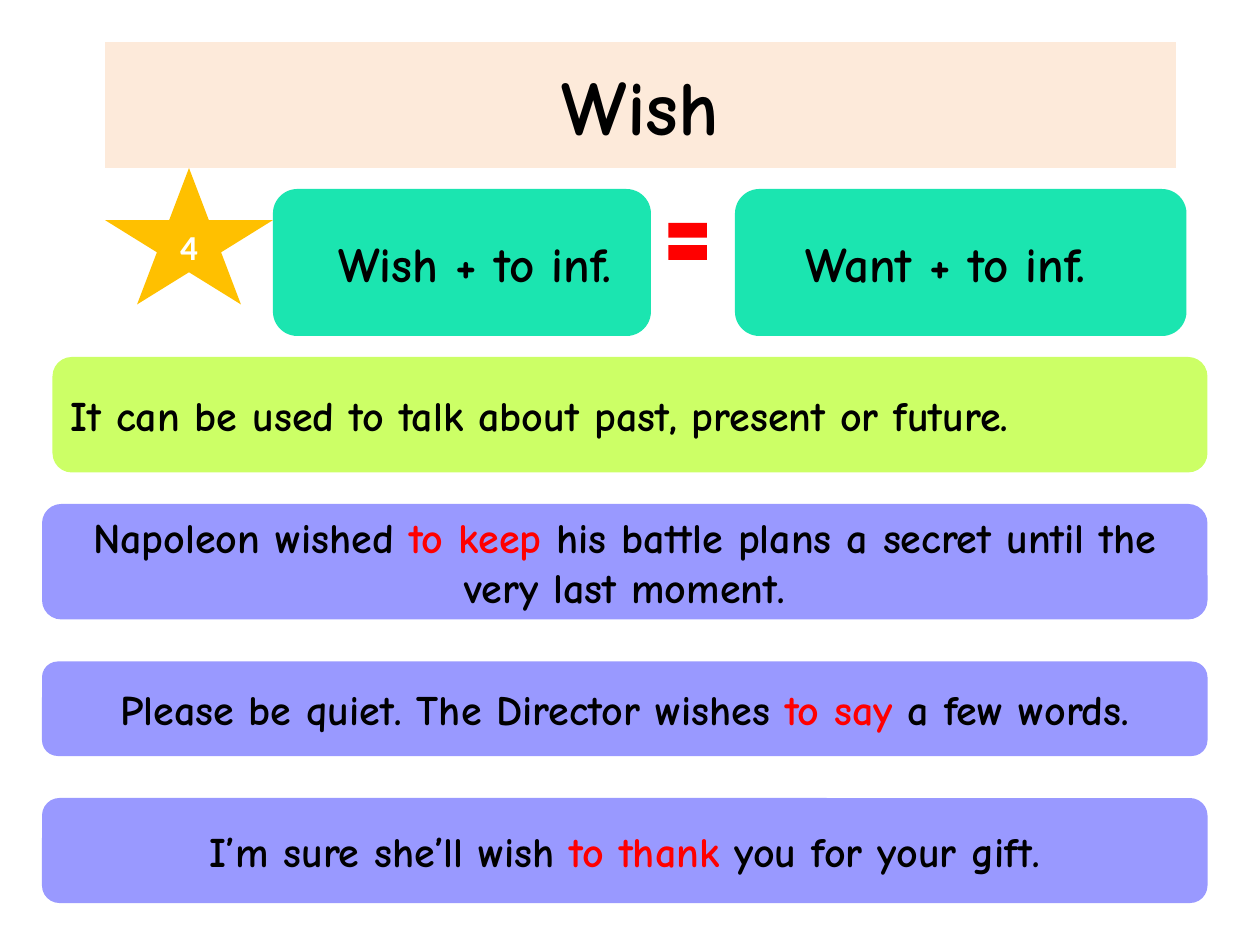
from pptx import Presentation
from pptx.dml.color import RGBColor
from pptx.enum.shapes import MSO_SHAPE
from pptx.enum.text import MSO_ANCHOR, PP_ALIGN
from pptx.util import Pt

BLACK = RGBColor(0x00, 0x00, 0x00)
WHITE = RGBColor(0xFF, 0xFF, 0xFF)
RED = RGBColor(0xFF, 0x00, 0x00)
PEACH = RGBColor(0xFD, 0xEA, 0xDA)
LIME = RGBColor(0xCC, 0xFF, 0x66)
MINT = RGBColor(0x1B, 0xE5, 0xB0)
LAVENDER = RGBColor(0x99, 0x99, 0xFF)
GOLD = RGBColor(0xFF, 0xC0, 0x00)

EXAMPLES = [
    (288, 66, "Napoleon wished ", "to keep ",
     "his battle plans a secret until the very last moment."),
    (378, 54, "Please be quiet. The Director wishes ", "to say ", "a few words."),
    (456, 60, "I’m sure she’ll wish ", "to thank ", "you for your gift."),
]


class LessonSlide:
    font = "Comic Neue"
    inset = 7.2

    def __init__(self, presentation):
        self.slide = presentation.slides.add_slide(presentation.slide_layouts[5])

    def add_text(self, shape, runs, size, alignment=PP_ALIGN.CENTER, font=font, indent=0):
        frame = shape.text_frame
        frame.word_wrap = True
        frame.vertical_anchor = MSO_ANCHOR.MIDDLE
        frame.margin_left = Pt(self.inset + indent)
        paragraph = frame.paragraphs[0]
        paragraph.alignment = alignment
        for text, color in runs:
            run = paragraph.add_run()
            run.text = text
            run.font.name = font
            run.font.size = Pt(size)
            run.font.bold = True
            run.font.color.rgb = color

    def fill(self, shape, color):
        shape.fill.solid()
        shape.fill.fore_color.rgb = color
        shape.line.fill.background()

    def title(self, text, left, top, width, height):
        shape = self.slide.shapes.title
        shape.left, shape.top = Pt(left), Pt(top)
        shape.width, shape.height = Pt(width), Pt(height)
        self.fill(shape, PEACH)
        self.add_text(shape, [(text, BLACK)], 44)

    def symbol(self, kind, left, top, width, height, color):
        shape = self.slide.shapes.add_shape(
            kind, Pt(left), Pt(top), Pt(width), Pt(height))
        shape.shadow.inherit = False
        self.fill(shape, color)
        return shape

    def panel(self, left, top, width, height, color):
        return self.symbol(MSO_SHAPE.ROUNDED_RECTANGLE, left, top, width, height, color)

    def formula(self, text, left, width, indent):
        shape = self.panel(left, 108, width, 84, MINT)
        self.add_text(shape, [(text, BLACK)], 28, PP_ALIGN.LEFT, indent=indent)

    def rule(self, text):
        shape = self.panel(30, 204, 660, 66, LIME)
        self.add_text(shape, [(text, BLACK)], 24, PP_ALIGN.LEFT)

    def example(self, top, height, before, infinitive, after):
        shape = self.panel(24, top, 666, height, LAVENDER)
        self.add_text(shape, [(before, BLACK), (infinitive, RED), (after, BLACK)], 24)

    def star(self, number):
        shape = self.symbol(MSO_SHAPE.STAR_5_POINT, 60, 96, 96, 78, GOLD)
        self.add_text(shape, [(number, WHITE)], 20, font="Calibri")


def main():
    presentation = Presentation()
    presentation.slide_width, presentation.slide_height = Pt(720), Pt(540)
    lesson = LessonSlide(presentation)
    lesson.title("Wish", 60, 24, 612, 72)
    lesson.rule("It can be used to talk about past, present or future.")
    lesson.formula("Wish + to inf.", 156, 216, 26)
    lesson.star("4")
    lesson.formula("Want + to inf.", 420, 258, 29)
    lesson.symbol(MSO_SHAPE.MATH_EQUAL, 378, 120, 30, 36, RED)
    for example in EXAMPLES:
        lesson.example(*example)
    presentation.save("out.pptx")


if __name__ == "__main__":
    main()
